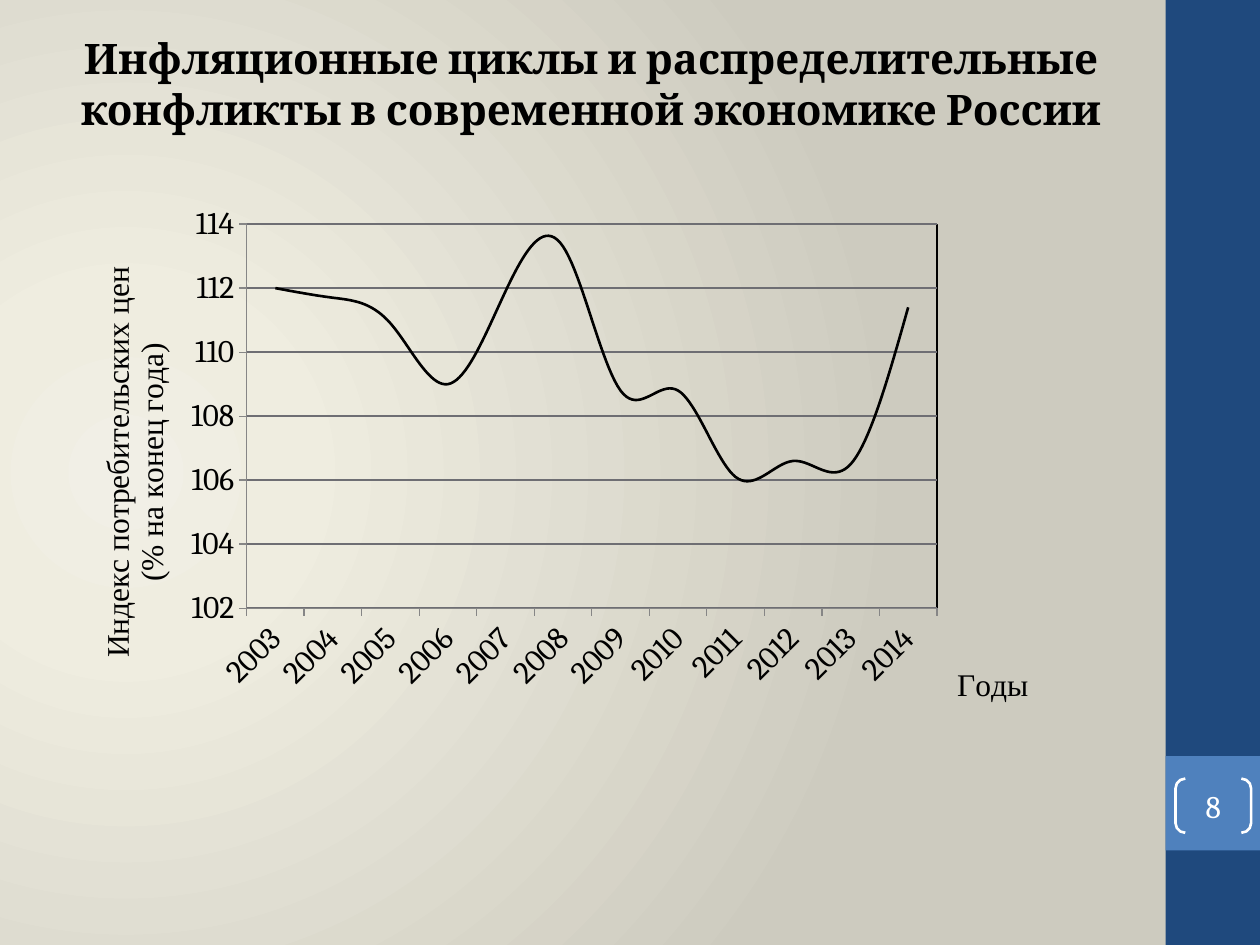
from lxml import etree
from pptx import Presentation
from pptx import util as u
from pptx.chart.data import CategoryChartData
from pptx.dml.color import RGBColor
from pptx.enum import chart as charts, shapes, text
from pptx.oxml import parse_xml
from pptx.oxml.ns import nsdecls, qn

COLORS = {"navy": "1F497D", "blue": "4F81BD", "white": "FFFFFF",
          "black": "000000", "axis": "868686", "grid": "6E6E73"}
GRADIENT = [(0, "F1EFE6", 58), (22, "EFEDE0", 72), (100, "CDCBBF", 100)]
INFLATION = {2003: 112, 2004: 111.7, 2005: 110.9, 2006: 109, 2007: 111.9, 2008: 113.3,
             2009: 108.8, 2010: 108.8, 2011: 106.1, 2012: 106.6, 2013: 106.5, 2014: 111.4}


class SlideBuilder:
    """Hold the style and the current slide, and draw each kind of element."""

    def __init__(self, presentation):
        self.slide = presentation.slides.add_slide(presentation.slide_layouts[6])
        self.font = "Cambria"
        self.label_font = "Times New Roman"
        self.size = 18

    def color(self, name):
        return RGBColor.from_string(COLORS[name])

    def style_font(self, font, color="black", size=None, name=None, bold=False):
        font.name = name or self.font
        font.size = u.Pt(size or self.size)
        font.bold = bold
        font.color.rgb = self.color(color)

    def style_line(self, line, color, width):
        line.color.rgb = self.color(color)
        line.width = u.Pt(width)

    def background(self, stops):
        stop_xml = "".join(
            f'<a:gs pos="{position * 1000}"><a:srgbClr val="{color}">'
            f'<a:alpha val="{alpha * 1000}"/></a:srgbClr></a:gs>'
            for position, color, alpha in stops)
        self.slide.background.fill.solid()
        properties = self.slide.background._cSld.bg.bgPr
        properties.replace(properties[0], parse_xml(
            f'<a:gradFill {nsdecls("a")} rotWithShape="1"><a:gsLst>{stop_xml}</a:gsLst>'
            '<a:path path="circle"><a:fillToRect l="20000" t="50000" r="100000" b="50000"/>'
            '</a:path></a:gradFill>'))

    def shape(self, kind, box, fill=None, line=None):
        shape = self.slide.shapes.add_shape(kind, *map(u.Inches, box))
        shape.shadow.inherit = False
        if fill:
            shape.fill.solid()
            shape.fill.fore_color.rgb = self.color(fill)
        else:
            shape.fill.background()
        if line:
            self.style_line(shape.line, line, 1.5)
        else:
            shape.line.fill.background()
        return shape

    def page_number(self, box, number):
        shape = self.shape(shapes.MSO_SHAPE.DOUBLE_BRACKET, box, line="white")
        shape.adjustments[0] = 0.18
        frame = shape.text_frame
        frame.margin_left = frame.margin_right = frame.margin_top = frame.margin_bottom = 0
        frame.vertical_anchor = text.MSO_ANCHOR.MIDDLE
        self.set_text(frame.paragraphs[0], number, color="white")

    def set_text(self, paragraph, words, **style):
        paragraph.text = words
        paragraph.alignment = text.PP_ALIGN.CENTER
        self.style_font(paragraph.font, **style)

    def title(self, box, words):
        frame = self.slide.shapes.add_textbox(*map(u.Inches, box)).text_frame
        frame.word_wrap = True
        frame.auto_size = text.MSO_AUTO_SIZE.SHAPE_TO_FIT_TEXT
        self.set_text(frame.paragraphs[0], words, size=24, bold=True)

    def place(self, element, index, **values):
        for layout in element.findall(qn("c:layout")):
            element.remove(layout)
        layout = etree.Element(qn("c:layout"))
        manual = etree.SubElement(layout, qn("c:manualLayout"))
        for key, value in values.items():
            etree.SubElement(manual, qn(f"c:{key}")).set("val", str(value))
        element.insert(index, layout)

    def axis(self, axis, lines, x, y):
        axis.major_tick_mark = charts.XL_TICK_MARK.OUTSIDE
        axis.minor_tick_mark = charts.XL_TICK_MARK.NONE
        self.style_font(axis.tick_labels.font)
        self.style_line(axis.format.line, "axis", 0.75)
        frame = axis.axis_title.text_frame
        for number, words in enumerate(lines):
            paragraph = frame.add_paragraph() if number else frame.paragraphs[0]
            self.set_text(paragraph, words, name=self.label_font)
        self.place(axis.axis_title._element, 1, xMode="edge", yMode="edge", x=x, y=y)

    def line_chart(self, box, values):
        data = CategoryChartData()
        data.categories = [str(year) for year in values]
        data.add_series("Series 1", list(values.values()))
        chart = self.slide.shapes.add_chart(
            charts.XL_CHART_TYPE.LINE, *map(u.Inches, box), data).chart
        chart.has_title = chart.has_legend = False
        self.style_font(chart.font, size=10)
        chart.plots[0].vary_by_categories = False

        series = chart.plots[0].series[0]
        series.smooth = True
        series.marker.style = charts.XL_MARKER_STYLE.NONE
        self.style_line(series.format.line, "black", 1.5)

        category_axis, value_axis = chart.category_axis, chart.value_axis
        self.axis(category_axis, ["Годы"], 0.85, 0.82)
        category_axis._element.txPr.bodyPr.set("rot", "-2700000")
        self.axis(value_axis, ["Индекс потребительских цен", "(% на конец года)"], 0.02, 0.12)
        value_axis.axis_title.text_frame._txBody.bodyPr.set("rot", "-5400000")
        value_axis.minimum_scale, value_axis.maximum_scale = 102, 114
        value_axis.major_unit = 2
        value_axis.tick_labels.number_format = "0"
        value_axis.tick_labels.number_format_is_linked = False
        self.style_line(value_axis.major_gridlines.format.line, "grid", 1)

        chart_element = chart._chartSpace.chart
        plot_area = chart_element.plotArea
        self.place(plot_area, 0, layoutTarget="inner", xMode="edge", yMode="edge",
                   x=0.167, y=0.051, w=0.669, h=0.679)
        border = (f'<a:ln w="9525"><a:solidFill><a:srgbClr val="{COLORS["black"]}"/>'
                  '</a:solidFill></a:ln>')
        properties = f'<c:spPr {nsdecls("c", "a")}><a:noFill/>%s</c:spPr>'
        plot_area.append(parse_xml(properties % border))
        chart_element.addnext(parse_xml(properties % "<a:ln><a:noFill/></a:ln>"))


def main():
    presentation = Presentation()
    presentation.slide_width, presentation.slide_height = u.Inches(10), u.Inches(7.5)
    builder = SlideBuilder(presentation)
    builder.background(GRADIENT)
    builder.shape(shapes.MSO_SHAPE.RECTANGLE, (9.25, 0, 0.75, 7.5), "navy")
    builder.shape(shapes.MSO_SHAPE.RECTANGLE, (9.25, 6, 0.75, 0.75), "blue")
    builder.page_number((9.33, 6.18, 0.6, 0.43), "8")
    builder.title((0.2, 0.21, 8.98, 0.91),
                  "Инфляционные циклы и распределительные конфликты в современной экономике России")
    builder.line_chart((0.59, 1.55, 8.19, 4.49), INFLATION)
    presentation.save("out.pptx")


if __name__ == "__main__":
    main()
